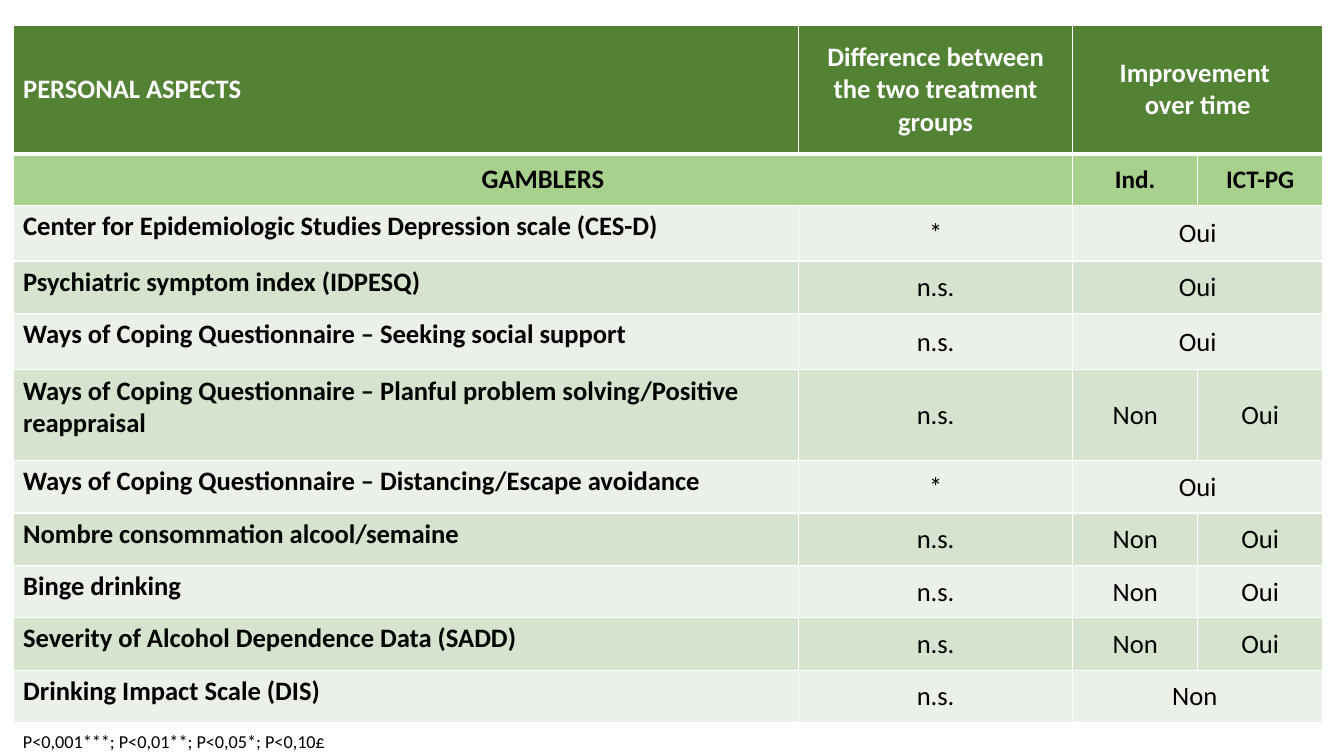
"""Build the slide with the table of gamblers' personal aspects."""
from typing import NamedTuple

from lxml import etree
from pptx import Presentation
from pptx import util as u
from pptx.dml.color import RGBColor
from pptx.enum import text
from pptx.oxml.ns import qn

PX = 9144
FONT = "Calibri"
WHITE = RGBColor(0xFF, 0xFF, 0xFF)
BLACK = RGBColor(0, 0, 0)
DARK = RGBColor(0x54, 0x82, 0x35)
MID = RGBColor(0xA9, 0xD1, 0x8E)
PALE = RGBColor(0xEB, 0xF1, 0xE9)
SOFT = RGBColor(0xD5, 0xE3, 0xCF)

WIDTHS = [779, 272, 124, 124]
HEIGHTS = [128, 51, 55, 52, 56, 90, 52, 52, 52, 52, 52]


class Look(NamedTuple):
    """Style of one table cell."""
    fill: RGBColor
    color: RGBColor = BLACK
    size: int = 19
    bold: bool = True
    mid: bool = True
    tight: bool = False
    center: bool = True


class Scale(NamedTuple):
    """One measured scale and its results."""
    name: str
    diff: str
    gains: tuple[str, ...]


SCALES = [
    Scale("Center for Epidemiologic Studies Depression scale (CES-D)", "*", ("Oui",)),
    Scale("Psychiatric symptom index (IDPESQ)", "n.s.", ("Oui",)),
    Scale("Ways of Coping Questionnaire – Seeking social support", "n.s.", ("Oui",)),
    Scale("Ways of Coping Questionnaire – Planful problem solving/Positive reappraisal",
          "n.s.", ("Non", "Oui")),
    Scale("Ways of Coping Questionnaire – Distancing/Escape avoidance", "*", ("Oui",)),
    Scale("Nombre consommation alcool/semaine", "n.s.", ("Non", "Oui")),
    Scale("Binge drinking", "n.s.", ("Non", "Oui")),
    Scale("Severity of Alcohol Dependence Data (SADD)", "n.s.", ("Non", "Oui")),
    Scale("Drinking Impact Scale (DIS)", "n.s.", ("Non ",)),
]


def px(n: int) -> u.Emu:
    """Turn px into EMU."""
    return u.Emu(n * PX)


def write(para, words: str, size: int, color: RGBColor, bold: bool) -> None:
    """Add one run to a paragraph."""
    run = para.add_run()
    run.text = words
    font = run.font
    font.name, font.size, font.bold = FONT, u.Pt(size), bold
    font.color.rgb = color


def edge(cell, row: int) -> None:
    """Draw white borders, thick under the header row."""
    props = cell._tc.get_or_add_tcPr()
    for side in "LRTB":
        thick = (row, side) in ((0, "B"), (1, "T"))
        line = etree.SubElement(props, qn(f"a:ln{side}"), w=str(u.Pt(3 if thick else 1)))
        fill = etree.SubElement(line, qn("a:solidFill"))
        etree.SubElement(fill, qn("a:srgbClr"), val=str(WHITE))


def put(table, row: int, col: int, words: str, look: Look, span: int = 1) -> None:
    """Fill and style a cell that spans one or more columns."""
    for part in range(col, col + span):
        cell = table.cell(row, part)
        edge(cell, row)
        cell.fill.solid()
        cell.fill.fore_color.rgb = look.fill
    cell = table.cell(row, col)
    if span > 1:
        cell.merge(table.cell(row, col + span - 1))
    cell.vertical_anchor = text.MSO_ANCHOR.MIDDLE if look.mid else text.MSO_ANCHOR.TOP
    if look.tight:
        cell.margin_left = cell.margin_right = cell.margin_top = px(1)
        cell.margin_bottom = 0
    frame = cell.text_frame
    for i, part in enumerate(words.split("\n")):
        para = frame.add_paragraph() if i else frame.paragraphs[0]
        para.alignment = text.PP_ALIGN.CENTER if look.center else text.PP_ALIGN.LEFT
        write(para, part, look.size, look.color, look.bold)


def fill_table(table) -> None:
    """Write the header rows and one row per scale."""
    head = Look(DARK, WHITE)
    put(table, 0, 0, "PERSONAL ASPECTS", head._replace(center=False))
    put(table, 0, 1, "Difference between the two treatment groups", head)
    put(table, 0, 2, "Improvement \nover time", head, 2)
    put(table, 1, 0, "GAMBLERS", Look(MID), 2)
    for col, group in enumerate(("Ind.", "ICT-PG"), 2):
        put(table, 1, col, group, Look(MID, size=18))
    for row, scale in enumerate(SCALES, 2):
        fill = SOFT if row % 2 else PALE
        value = Look(fill, bold=False, tight=True)
        put(table, row, 0, scale.name, Look(fill, mid=False, center=False))
        put(table, row, 1, scale.diff, value)
        for col, gain in enumerate(scale.gains, 2):
            put(table, row, col, gain, value, 3 - len(scale.gains))


def main() -> None:
    """Build and save the deck."""
    deck = Presentation()
    deck.slide_width, deck.slide_height = px(1333), px(750)
    slide = deck.slides.add_slide(deck.slide_layouts[6])
    table = slide.shapes.add_table(
        len(HEIGHTS), len(WIDTHS), px(13), px(25), px(sum(WIDTHS)), px(sum(HEIGHTS))).table
    table.first_row = table.horz_banding = False
    for col, width in zip(table.columns, WIDTHS):
        col.width = px(width)
    for row, height in zip(table.rows, HEIGHTS):
        row.height = px(height)
    fill_table(table)
    note = slide.shapes.add_textbox(px(13), px(720), px(337), px(32)).text_frame
    note.word_wrap = True
    note.auto_size = text.MSO_AUTO_SIZE.SHAPE_TO_FIT_TEXT
    write(note.paragraphs[0], "P<0,001***; P<0,01**; P<0,05*; P<0,10£", 13, BLACK, False)
    deck.save("out.pptx")


if __name__ == "__main__":
    main()
